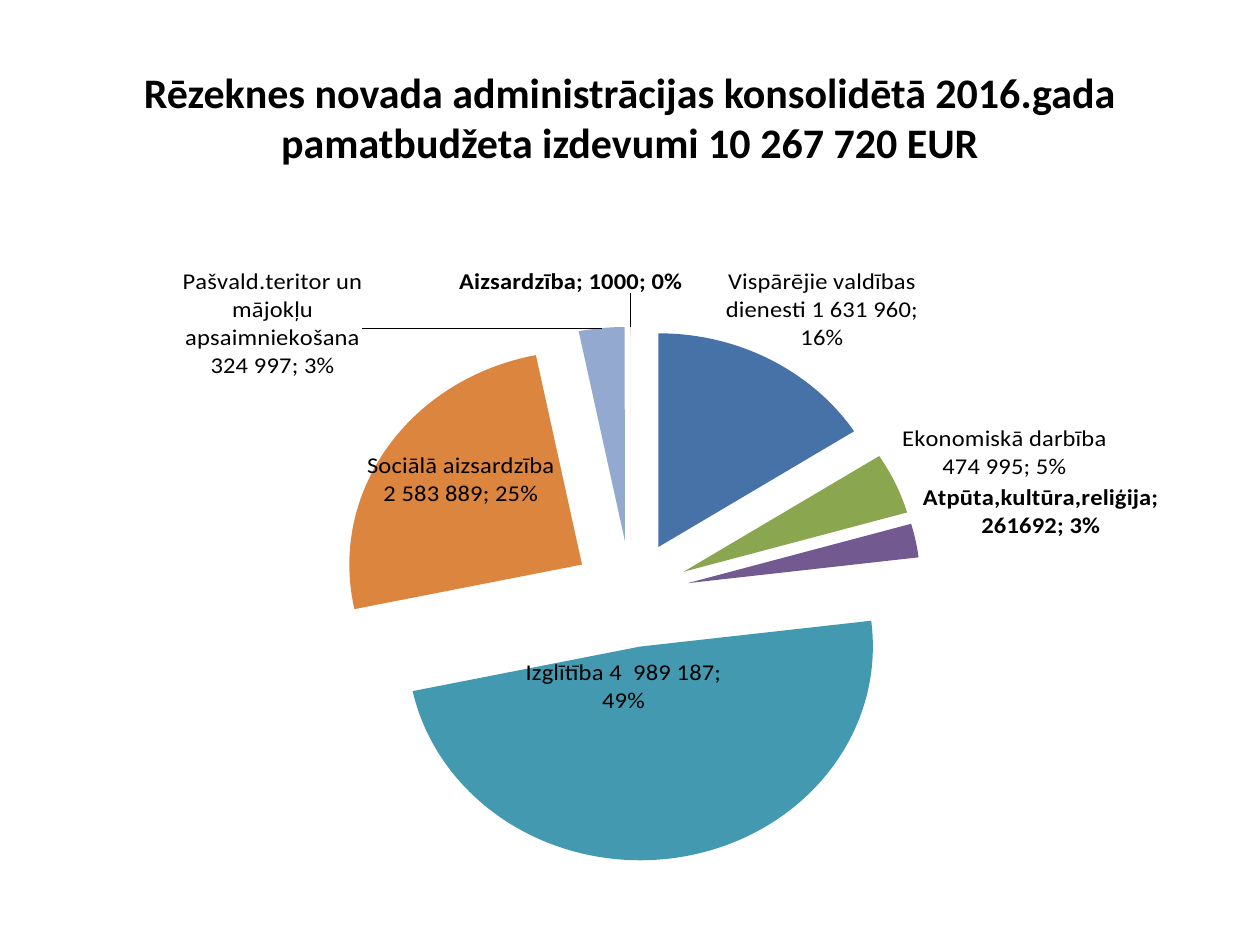
from lxml import etree
from pptx import Presentation
from pptx.chart.data import CategoryChartData
from pptx.dml.color import RGBColor
from pptx.enum import chart as kinds, text as styles
from pptx.oxml import ns
from pptx.util import Pt

COLORS = {
    "black": "000000",
    "blue": "4672A8",
    "red": "AB4744",
    "green": "8AA64F",
    "purple": "725990",
    "teal": "4299B0",
    "orange": "DC853E",
    "light blue": "93A9CF",
    "pink": "D19392",
}
FONT = "Calibri"
TITLE = ("Rēzeknes novada administrācijas konsolidētā 2016.gada "
         "pamatbudžeta izdevumi 10 267 720 EUR")
EXPENSES = [
    ("Vispārējie valdības dienesti", 1631960, "blue"),
    ("", None, "red"),
    ("Ekonomiskā darbība", 474995, "green"),
    ("Atpūta,kultūra,reliģija", 261692, "purple"),
    ("Izglītība", 4989187, "teal"),
    ("Sociālā aizsardzība", 2583889, "orange"),
    ("Pašvald.teritor un mājokļu apsaimniekošana", 324997, "light blue"),
    ("Aizsardzība", 1000, "pink"),
]
OUTSIDE = kinds.XL_LABEL_POSITION.OUTSIDE_END
CENTER = kinds.XL_LABEL_POSITION.CENTER
LABELS = [
    (0, "Vispārējie valdības dienesti 1 631 960; 16%", OUTSIDE, -0.04, -0.01),
    (2, "Ekonomiskā darbība 474 995; 5%", OUTSIDE, 0, 0),
    (4, "Izglītība 4\u00a0 989 187; 49%".replace("\u00a0", " "), CENTER, -0.03, -0.1),
    (5, "Sociālā aizsardzība\n2 583 889; 25%", CENTER, -0.02, -0.04),
    (6, "Pašvald.teritor un mājokļu apsaimniekošana\n324 997; 3%", OUTSIDE, -0.2, 0.07),
    (7, None, OUTSIDE, -0.05, -0.04),
]


def rgb(name):
    """Return the named colour."""
    return RGBColor.from_string(COLORS[name])


def style_font(font, size, bold=False, color="black"):
    """Set the face, size, weight and colour of a font."""
    font.name, font.size, font.bold = FONT, Pt(size), bold
    font.color.rgb = rgb(color)


def write_text(frame, content, size=14, bold=False, align=styles.PP_ALIGN.CENTER):
    """Write each line of the content as one formatted paragraph."""
    for index, line in enumerate(content.split("\n")):
        paragraph = frame.add_paragraph() if index else frame.paragraphs[0]
        paragraph.alignment = align
        run = paragraph.add_run()
        run.text = line
        style_font(run.font, size, bold)


def make_layout(**settings):
    """Return a manual chart layout holding the given settings."""
    layout = etree.Element(ns.qn("c:layout"))
    manual = etree.SubElement(layout, ns.qn("c:manualLayout"))
    for tag, value in settings.items():
        etree.SubElement(manual, ns.qn(f"c:{tag}")).set("val", str(value))
    return layout


def show_parts(element):
    """Show category, value and percentage, split by semicolons."""
    for tag in ("showVal", "showCatName", "showPercent"):
        element.find(ns.qn(f"c:{tag}")).set("val", "1")
    separator = etree.Element(ns.qn("c:separator"))
    separator.text = "; "
    element.find(ns.qn("c:showBubbleSize")).addnext(separator)


def add_title(slide, left, top, width, height):
    """Place the slide title in the given box."""
    frame = slide.shapes.add_textbox(left, top, width, height).text_frame
    frame.word_wrap = True
    frame.vertical_anchor = styles.MSO_ANCHOR.MIDDLE
    write_text(frame, TITLE, size=24, bold=True)


def add_labels(series):
    """Label the slices and move single labels by a share of the chart."""
    labels = series.data_labels
    style_font(labels.font, 14, bold=True)
    labels.position = OUTSIDE
    show_parts(labels._element)
    for index, content, position, x, y in LABELS:
        label = series.points[index].data_label
        if content:
            write_text(label.text_frame, content)
        else:
            style_font(label.font, 14, bold=True)
        label.position = position
        element = labels._element.xpath(f"c:dLbl[c:idx/@val='{index}']")[0]
        show_parts(element)
        element.insert(1, make_layout(x=x, y=y))


def add_expense_pie(slide, left, top, width, height):
    """Place the exploded pie of expenses in the given box."""
    data = CategoryChartData()
    data.categories = [name for name, _, _ in EXPENSES]
    data.add_series("Series 1", [value for _, value, _ in EXPENSES])
    chart = slide.shapes.add_chart(
        kinds.XL_CHART_TYPE.PIE, left, top, width, height, data).chart
    chart.has_title = chart.has_legend = False
    style_font(chart.font, 10)
    plot = chart.plots[0]
    plot.vary_by_categories = True
    series = plot.series[0]
    explosion = etree.Element(ns.qn("c:explosion"), val="25")
    series._element.find(ns.qn("c:tx")).addnext(explosion)
    for index, (_, _, color) in enumerate(EXPENSES):
        fill = series.points[index].format.fill
        fill.solid()
        fill.fore_color.rgb = rgb(color)
    add_labels(series)
    area = plot._element.getparent()
    for layout in area.findall(ns.qn("c:layout")):
        area.remove(layout)
    area.insert(0, make_layout(layoutTarget="inner", xMode="edge", yMode="edge",
                               x=0.08, y=0.09, w=0.84, h=0.82))


def main():
    """Build and save the presentation."""
    presentation = Presentation()
    presentation.slide_width, presentation.slide_height = Pt(720), Pt(540)
    slide = presentation.slides.add_slide(presentation.slide_layouts[6])
    add_title(slide, Pt(36), Pt(21.6), Pt(648), Pt(90))
    add_expense_pie(slide, Pt(20.2), Pt(120.2), Pt(680.4), Pt(405.4))
    presentation.save("out.pptx")


if __name__ == "__main__":
    main()
